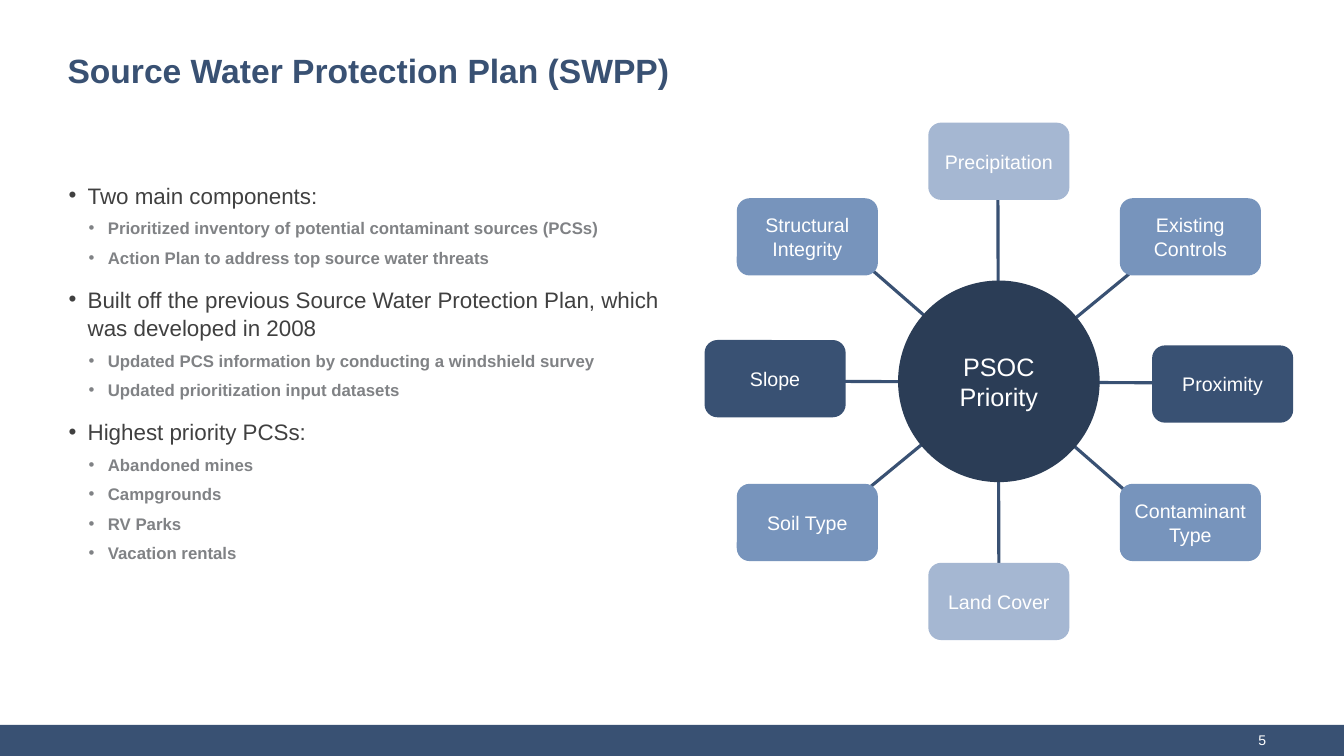
import pptx
import pptx.util
import pptx.dml.color
import pptx.enum.shapes
import pptx.enum.text
import lxml.etree

COLUMNS, ROWS = 40, 22.5
CELL = pptx.util.Inches(1) / 3
FONT = "Arial"
COLORS = {
    "navy": "395173",
    "hub": "2B3D56",
    "blue": "7794BC",
    "pale": "A5B7D2",
    "text": "404040",
    "detail": "808285",
    "white": "FFFFFF",
}
SHAPES = pptx.enum.shapes.MSO_SHAPE
ALIGN = pptx.enum.text.PP_ALIGN
MIDDLE = pptx.enum.text.MSO_ANCHOR.MIDDLE

HUB_CENTER = (29.73, 11.35)
FACTOR_SIZE = (4.2, 2.3)
FACTORS = [
    ("Precipitation", 0, -6.55, "pale"),
    ("Land Cover", 0, 6.55, "pale"),
    ("Slope", -6.66, -0.08, "navy"),
    ("Proximity", 6.66, 0.08, "navy"),
    ("Soil Type", -5.7, 4.2, "blue"),
    ("Contaminant Type", 5.7, 4.2, "blue"),
    ("Structural Integrity", -5.7, -4.3, "blue"),
    ("Existing Controls", 5.7, -4.3, "blue"),
]
SPOKES = [
    (29.7, 5.85, 29.73, 17.49),
    (34.29, 7.59, 25.83, 14.55),
    (25.89, 7.98, 34.29, 15.3),
    (22.5, 11.34, 36.18, 11.4),
]
OUTLINE = [
    ("Two main components:", [
        "Prioritized inventory of potential contaminant sources (PCSs)",
        "Action Plan to address top source water threats",
    ]),
    ("Built off the previous Source Water Protection Plan, which was developed in 2008", [
        "Updated PCS information by conducting a windshield survey",
        "Updated prioritization input datasets",
    ]),
    ("Highest priority PCSs:", [
        "Abandoned mines",
        "Campgrounds",
        "RV Parks",
        "Vacation rentals",
    ]),
]


def cells(*counts):
    return [round(count * CELL) for count in counts]


def rgb(name):
    return pptx.dml.color.RGBColor.from_string(COLORS[name])


def style(paragraph, size, color, bold=False, align=ALIGN.LEFT):
    paragraph.alignment = align
    font = paragraph.font
    font.name, font.size, font.bold = FONT, pptx.util.Pt(size), bold
    font.color.rgb = rgb(color)


def add_panel(slide, kind, box, color, label="", size=14):
    panel = slide.shapes.add_shape(kind, *cells(*box))
    panel.shadow.inherit = False
    panel.fill.solid()
    panel.fill.fore_color.rgb = rgb(color)
    panel.line.fill.background()
    if label:
        panel.text_frame.word_wrap = True
        panel.text_frame.vertical_anchor = MIDDLE
        panel.text_frame.text = label
        style(panel.text_frame.paragraphs[0], size, "white", align=ALIGN.CENTER)


def add_centered(slide, kind, center, size, color, label, points):
    box = (center[0] - size[0] / 2, center[1] - size[1] / 2, *size)
    add_panel(slide, kind, box, color, label, points)


def add_spoke(slide, ends):
    spoke = slide.shapes.add_connector(
        pptx.enum.shapes.MSO_CONNECTOR.STRAIGHT, *cells(*ends))
    spoke.line.color.rgb = rgb("navy")
    spoke.line.width = pptx.util.Pt(2.25)
    lxml.etree.SubElement(
        spoke._element.spPr, pptx.oxml.ns.qn("a:effectLst"))


def add_frame(slide, box, side_inset):
    frame = slide.shapes.add_textbox(*cells(*box)).text_frame
    frame.word_wrap = True
    frame.margin_left = frame.margin_right = pptx.util.Inches(side_inset)
    return frame


def add_line(slide, box, text, size, color, bold=False, align=ALIGN.LEFT, side_inset=0):
    frame = add_frame(slide, box, side_inset)
    frame.vertical_anchor = MIDDLE
    frame.text = text
    style(frame.paragraphs[0], size, color, bold, align)


def add_bullet(frame, text, level, first):
    paragraph = frame.paragraphs[0] if first else frame.add_paragraph()
    paragraph.text = text
    paragraph.level = level
    paragraph.line_spacing = 1.05
    paragraph.space_before = pptx.util.Pt(0 if first or level else 6)
    paragraph.space_after = pptx.util.Pt(6)
    properties = paragraph._p.get_or_add_pPr()
    indent = pptx.util.Inches(0.19)
    properties.set("marL", str(pptx.util.Inches((0.19, 0.39)[level])))
    properties.set("indent", str(-indent))
    lxml.etree.SubElement(
        properties, pptx.oxml.ns.qn("a:buFont"), typeface=FONT)
    lxml.etree.SubElement(
        properties, pptx.oxml.ns.qn("a:buChar"), char="•")
    if level:
        style(paragraph, 12, "detail", bold=True)
    else:
        style(paragraph, 16, "text")


def add_outline(slide, box):
    frame = add_frame(slide, box, 0)
    for index, (heading, details) in enumerate(OUTLINE):
        add_bullet(frame, heading, 0, index == 0)
        for detail in details:
            add_bullet(frame, detail, 1, False)


def add_factor_wheel(slide):
    for ends in SPOKES:
        add_spoke(slide, ends)
    add_centered(slide, SHAPES.OVAL, HUB_CENTER, (6, 6), "hub", "PSOC Priority", 18)
    for label, across, down, color in FACTORS:
        center = (HUB_CENTER[0] + across, HUB_CENTER[1] + down)
        add_centered(slide, SHAPES.ROUNDED_RECTANGLE, center, FACTOR_SIZE, color, label, 14)


def main():
    deck = pptx.Presentation()
    deck.slide_width, deck.slide_height = cells(COLUMNS, ROWS)
    slide = deck.slides.add_slide(deck.slide_layouts[6])
    footer_top = 21.57
    add_panel(slide, SHAPES.RECTANGLE,
              (0, footer_top, COLUMNS, ROWS - footer_top), "navy")
    add_line(slide, (2.01, 1.2, 35.97, 1.8),
             "Source Water Protection Plan (SWPP)", 24, "navy", bold=True)
    add_line(slide, (29.49, footer_top, 8.49, 0.87), "5", 10, "white",
             align=ALIGN.RIGHT, side_inset=0.1)
    add_outline(slide, (2.04, 5.22, 18.63, 15.03))
    add_factor_wheel(slide)
    deck.save("out.pptx")


if __name__ == "__main__":
    main()
